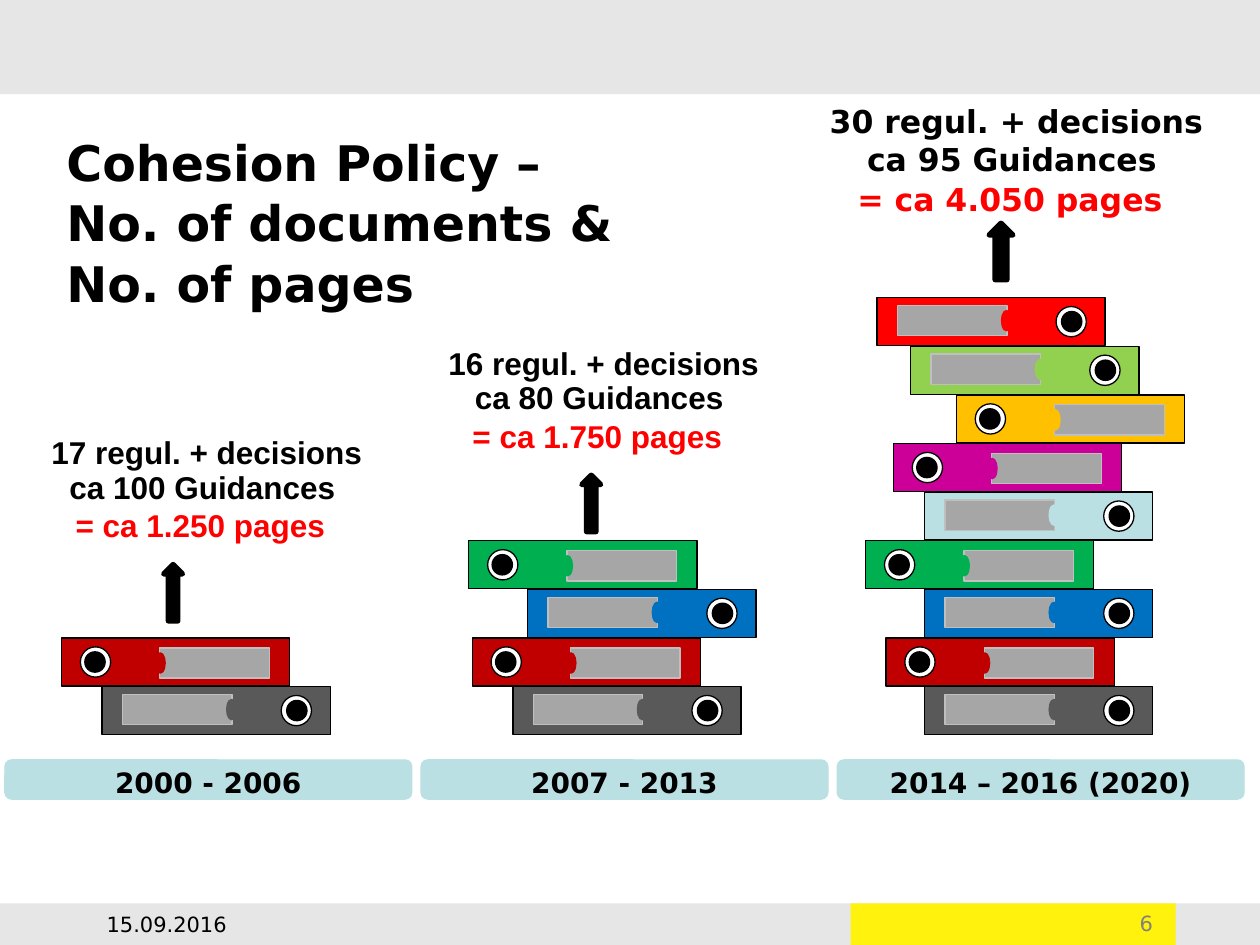
from dataclasses import dataclass
from pptx import Presentation
from pptx.dml.color import RGBColor
from pptx.enum.shapes import MSO_SHAPE
from pptx.enum.text import MSO_ANCHOR, PP_ALIGN
from pptx.util import Cm, Pt


@dataclass(frozen=True)
class Theme:
    sans: str = "DejaVu Sans"
    arial: str = "Arial"
    ink: str = "000000"
    paper: str = "FFFFFF"
    band: str = "E6E6E6"
    accent: str = "FFF20D"
    period: str = "BBE0E3"
    alert: str = "FF0000"
    muted: str = "808080"
    label: str = "A6A6A6"
    edge: str = "BFBFBF"
    title: int = 28
    note: int = 18
    era: int = 16
    foot: int = 12
    hair: float = 0.75
    bold: float = 3


T = Theme()

GRAY, DARK, BLUE, GREEN = "595959", "C00000", "0070C0", "00B050"
PALE, PINK, GOLD, LIME, RED = "BBE0E3", "CC0099", "FFC000", "92D050", "FF0000"

TITLE = "Cohesion Policy – No. of documents & No. of pages"

# Lengths in cm. Binders run from the bottom up: left, colour, turned around.
# Notes: left, top, width, then the distance of each line from the top.
ERAS = [
    dict(name="2000 - 2006",
         lines=("17 regul. + decisions", "ca 100 Guidances", "= ca 1.250 pages"),
         note=(0.64, 8.61, 7.06), steps=(0, 0.69, 1.47), font=T.arial,
         arrow=(3.3, 11.38, 0.38),
         binders=[(2.06, GRAY, False), (1.24, DARK, True)]),
    dict(name="2007 - 2013",
         lines=("16 regul. + decisions", "ca 80 Guidances", "= ca 1.750 pages"),
         note=(8.64, 6.81, 7.06), steps=(0, 0.69, 1.47), font=T.arial,
         arrow=(11.73, 9.58, 0.38),
         binders=[(10.34, GRAY, False), (9.52, DARK, True),
                  (10.64, BLUE, False), (9.45, GREEN, True)]),
    dict(name="2014 – 2016 (2020)",
         lines=("30 regul. + decisions", "ca 95 Guidances", "= ca 4.050 pages"),
         note=(15.88, 1.93, 9.22), steps=(0, 0.76, 1.57), font=T.sans,
         arrow=(19.94, 4.5, 0.48),
         binders=[(18.64, GRAY, False), (17.86, DARK, True),
                  (18.64, BLUE, False), (17.45, GREEN, True),
                  (18.64, PALE, False), (18.01, PINK, True),
                  (19.28, GOLD, True), (18.36, LIME, False),
                  (17.68, RED, False)]),
]

BANDS = [(0, 0, 25.4, 1.9, T.band), (0, 18.21, 25.4, 0.84, T.band),
         (17.15, 18.21, 6.55, 0.84, T.accent)]
FOOT = [("6", 18.21, 18.19, T.muted, PP_ALIGN.RIGHT),
        ("15.09.2016", 1.9, 18.21, T.ink, PP_ALIGN.LEFT)]

WIDE, HIGH, PITCH, BASE = 4.6, 0.97, 0.98, 13.84
ERA_X, ERA_Y, ERA_STEP = 0.1, 15.32, 8.39
SHIFTS = (0, 0.09, 0.13)


def draw(home, kind, box, fill, line=None, width=T.hair):
    shape = home.add_shape(kind, *map(Cm, box))
    shape.shadow.inherit = False
    shape.fill.solid()
    shape.fill.fore_color.rgb = RGBColor.from_string(fill)
    if line:
        shape.line.color.rgb = RGBColor.from_string(line)
        shape.line.width = Pt(width)
    else:
        shape.line.fill.background()
    return shape


def put(frame, text, size, color=T.ink, font=T.sans, bold=True,
        align=PP_ALIGN.CENTER, anchor=MSO_ANCHOR.MIDDLE):
    frame.word_wrap = True
    frame.vertical_anchor = anchor
    para = frame.paragraphs[0]
    para.alignment = align
    run = para.add_run()
    run.text = text
    run.font.size = Pt(size)
    run.font.name = font
    run.font.bold = bold
    run.font.color.rgb = RGBColor.from_string(color)
    return para


def write(home, box, *args, **opts):
    return put(home.add_textbox(*map(Cm, box)).text_frame, *args, **opts)


def stack(home, left, top, color, turned):
    """Draw one binder lying on its side, half turned if asked."""
    oval, rect = MSO_SHAPE.OVAL, MSO_SHAPE.RECTANGLE
    parts = [
        (rect, 0, 0, WIDE, HIGH, color, T.ink),
        (oval, 3.61, 0.18, 0.61, 0.61, T.paper, T.ink),
        (oval, 3.72, 0.28, 0.41, 0.41, T.ink, T.ink),
        (rect, 0.41, 0.16, 2.21, 0.61, T.label, T.edge),
        (oval, 2.51, 0.26, 0.2, 0.41, color, color),
    ]
    group = home.add_group_shape().shapes
    for kind, x, y, w, h, fill, line in parts:
        if turned:
            x, y = WIDE - x - w, HIGH - y - h
        shape = draw(group, kind, (left + x, top + y, w, h), fill, line)
        shape.rotation = 180 if turned else 0


def main():
    deck = Presentation()
    deck.slide_width, deck.slide_height = Cm(25.4), Cm(19.05)
    home = deck.slides.add_slide(deck.slide_layouts[6]).shapes

    for *box, fill in BANDS:
        draw(home, MSO_SHAPE.RECTANGLE, box, fill)
    for text, x, y, color, align in FOOT:
        write(home, (x, y, 5.28, 0.84), text, T.foot, color,
              bold=False, align=align)

    head = write(home, (1.09, 2.51, 11.76, 1.7), TITLE, T.title,
                 align=PP_ALIGN.LEFT, anchor=MSO_ANCHOR.TOP)
    head.line_spacing = 1.03

    for i, era in enumerate(ERAS):
        bar = draw(home, MSO_SHAPE.ROUNDED_RECTANGLE,
                   (ERA_X + i * ERA_STEP, ERA_Y, 8.2, 0.79),
                   T.period, T.period)
        frame = bar.text_frame
        frame.margin_top, frame.margin_bottom = Cm(0.1), 0
        put(frame, era["name"], T.era)

        for row, (left, color, turned) in enumerate(era["binders"]):
            stack(home, left, BASE - row * PITCH, color, turned)

        x, y, w = era["arrow"]
        draw(home, MSO_SHAPE.UP_ARROW, (x, y, w, 1.14), T.ink, T.ink, T.bold)

        x, y, w = era["note"]
        colors = (T.ink, T.ink, T.alert)
        for text, step, shift, color in zip(era["lines"], era["steps"],
                                            SHIFTS, colors):
            write(home, (x - shift, y + step, w, 1.02), text, T.note,
                  color, era["font"])

    deck.save("out.pptx")


if __name__ == "__main__":
    main()
